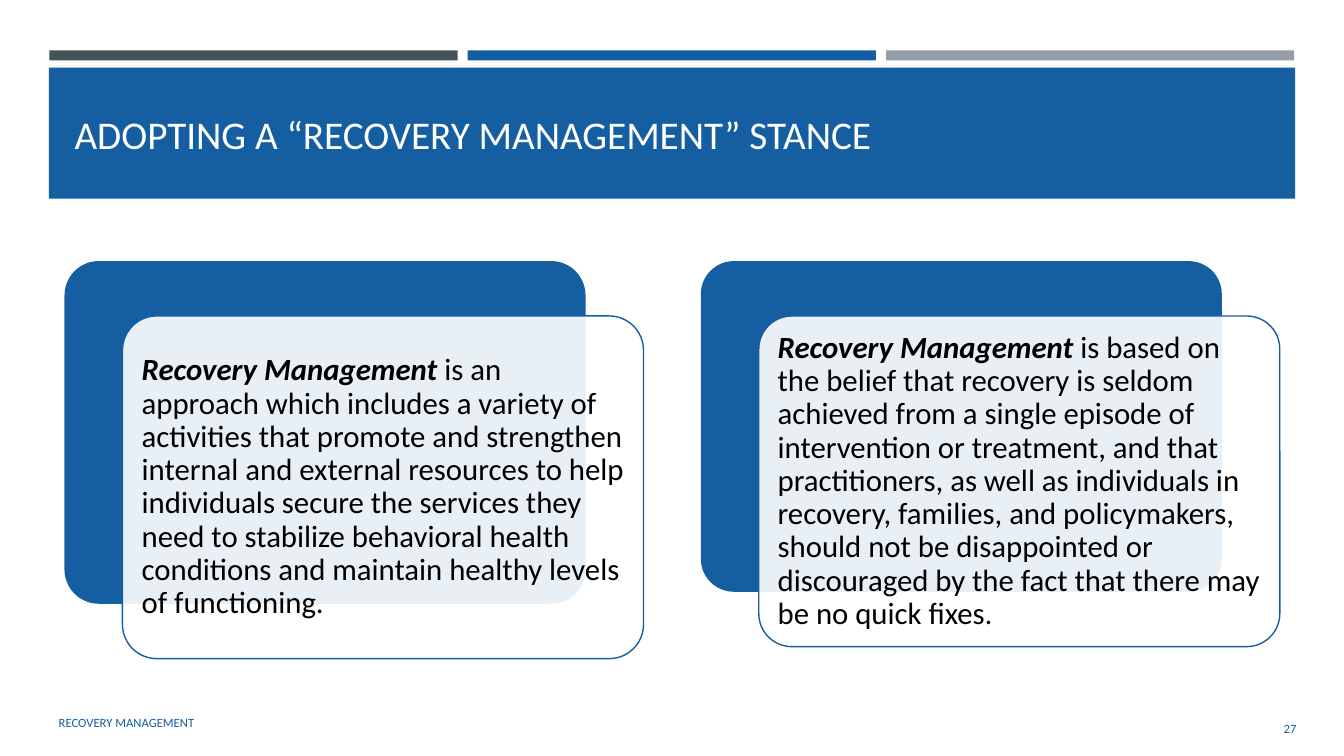
import pptx
import pptx.dml.color
import pptx.enum.shapes
import pptx.enum.text
import pptx.oxml
import pptx.oxml.ns
import pptx.util

Pt = pptx.util.Pt
RGBColor = pptx.dml.color.RGBColor
MSO_SHAPE = pptx.enum.shapes.MSO_SHAPE
MSO_ANCHOR = pptx.enum.text.MSO_ANCHOR
PP_ALIGN = pptx.enum.text.PP_ALIGN

BLUE = RGBColor(0x15, 0x5E, 0xA1)
SLATE = RGBColor(0x46, 0x53, 0x59)
GREY = RGBColor(0x96, 0x9F, 0xA7)
WHITE = RGBColor(0xFF, 0xFF, 0xFF)
BLACK = RGBColor(0x00, 0x00, 0x00)
FONT = "Calibri"

BAR_LEFT, BAR_STEP = 35.3, 298.8
CARD_LEFT, CARD_STEP, CARD_TOP, CARD_WIDTH = 46.1, 454.5, 186.5, 372.2
PANEL_SHIFT_X, PANEL_SHIFT_Y = 41.4, 39.2
PANEL_OPACITY = 90

CARDS = [
    (244.8, [
        ("Recovery Management ", 22, True),
        ("is an approach which includes a variety of activities that promote "
         "and strengthen internal and external resources to help individuals "
         "secure the services they need to stabilize behavioral health "
         "conditions and maintain healthy levels of functioning.", 22, False),
    ]),
    (236.2, [
        ("Recovery Management ", 22, True),
        ("is based on the belief that recovery is seldom achieved from a "
         "single episode of intervention or treatment, and that "
         "practitioners, as well as individuals in recovery, families, and "
         "policymakers, should not be disappointed or discouraged by the "
         "fact that there may be no quick fixes", 22, False),
        (".", 21, False),
    ]),
]


def add_run(paragraph, text, size, color, emphasis=False):
    run = paragraph.add_run()
    run.text = text
    run.font.name = FONT
    run.font.size = Pt(size)
    run.font.color.rgb = color
    run.font.bold = emphasis
    run.font.italic = emphasis


def add_block(slide, kind, left, top, width, height, fill):
    shape = slide.shapes.add_shape(kind, Pt(left), Pt(top), Pt(width), Pt(height))
    shape.shadow.inherit = False
    shape.fill.solid()
    shape.fill.fore_color.rgb = fill
    shape.line.fill.background()
    return shape


def set_opacity(shape, percent):
    color = shape.fill._xPr.find(".//" + pptx.oxml.ns.qn("a:srgbClr"))
    alpha = pptx.oxml.parse_xml(
        f'<a:alpha {pptx.oxml.ns.nsdecls("a")} val="{percent * 1000}"/>')
    color.append(alpha)


def add_card(slide, left, height, runs):
    """Add a blue block with a translucent text panel shifted over it."""
    block = add_block(slide, MSO_SHAPE.ROUNDED_RECTANGLE,
                      left, CARD_TOP, CARD_WIDTH, height, BLUE)
    panel = add_block(slide, MSO_SHAPE.ROUNDED_RECTANGLE, left + PANEL_SHIFT_X,
                      CARD_TOP + PANEL_SHIFT_Y, CARD_WIDTH, height, WHITE)
    for shape in (block, panel):
        shape.adjustments[0] = 0.1
    set_opacity(panel, PANEL_OPACITY)
    panel.line.color.rgb = BLUE
    panel.line.width = Pt(1)

    frame = panel.text_frame
    frame.word_wrap = True
    frame.vertical_anchor = MSO_ANCHOR.MIDDLE
    frame.margin_left = frame.margin_right = Pt(6.6)
    frame.margin_top = frame.margin_bottom = Pt(6.6)
    paragraph = frame.paragraphs[0]
    paragraph.alignment = PP_ALIGN.LEFT
    paragraph.line_spacing = 0.9
    for text, size, emphasis in runs:
        add_run(paragraph, text, size, BLACK, emphasis)


def add_footer(slide, text, left, top, width, alignment):
    box = slide.shapes.add_textbox(Pt(left), Pt(top), Pt(width), Pt(28.8))
    frame = box.text_frame
    frame.word_wrap = True
    frame.vertical_anchor = MSO_ANCHOR.MIDDLE
    paragraph = frame.paragraphs[0]
    paragraph.alignment = alignment
    paragraph.space_after = Pt(6)
    add_run(paragraph, text, 9, BLUE)


def add_header(slide):
    for index, color in enumerate((SLATE, BLUE, GREY)):
        add_block(slide, MSO_SHAPE.RECTANGLE,
                  BAR_LEFT + index * BAR_STEP, 36, 291.6, 7.2, color)
    banner = add_block(slide, MSO_SHAPE.RECTANGLE, 34.9, 48.3, 890.3, 93.6, BLUE)

    title = slide.shapes.title
    banner._element.addnext(title._element)
    title.left, title.top = Pt(46.1), Pt(55.8)
    title.width, title.height = Pt(868.3), Pt(79.9)
    frame = title.text_frame
    frame.word_wrap = True
    frame.vertical_anchor = MSO_ANCHOR.MIDDLE
    paragraph = frame.paragraphs[0]
    paragraph.alignment = PP_ALIGN.LEFT
    add_run(paragraph, "ADOPTING A “RECOVERY MANAGEMENT” STANCE", 28, WHITE)


def main():
    presentation = pptx.Presentation()
    presentation.slide_width = Pt(960)
    presentation.slide_height = Pt(540)
    slide = presentation.slides.add_slide(presentation.slide_layouts[5])
    add_header(slide)
    for index, (height, runs) in enumerate(CARDS):
        add_card(slide, CARD_LEFT + index * CARD_STEP, height, runs)
    add_footer(slide, "RECOVERY MANAGEMENT", 34.9, 501.8, 537.1, PP_ALIGN.LEFT)
    add_footer(slide, "27", 850.3, 506.2, 82.8, PP_ALIGN.RIGHT)
    presentation.save("out.pptx")


if __name__ == "__main__":
    main()
